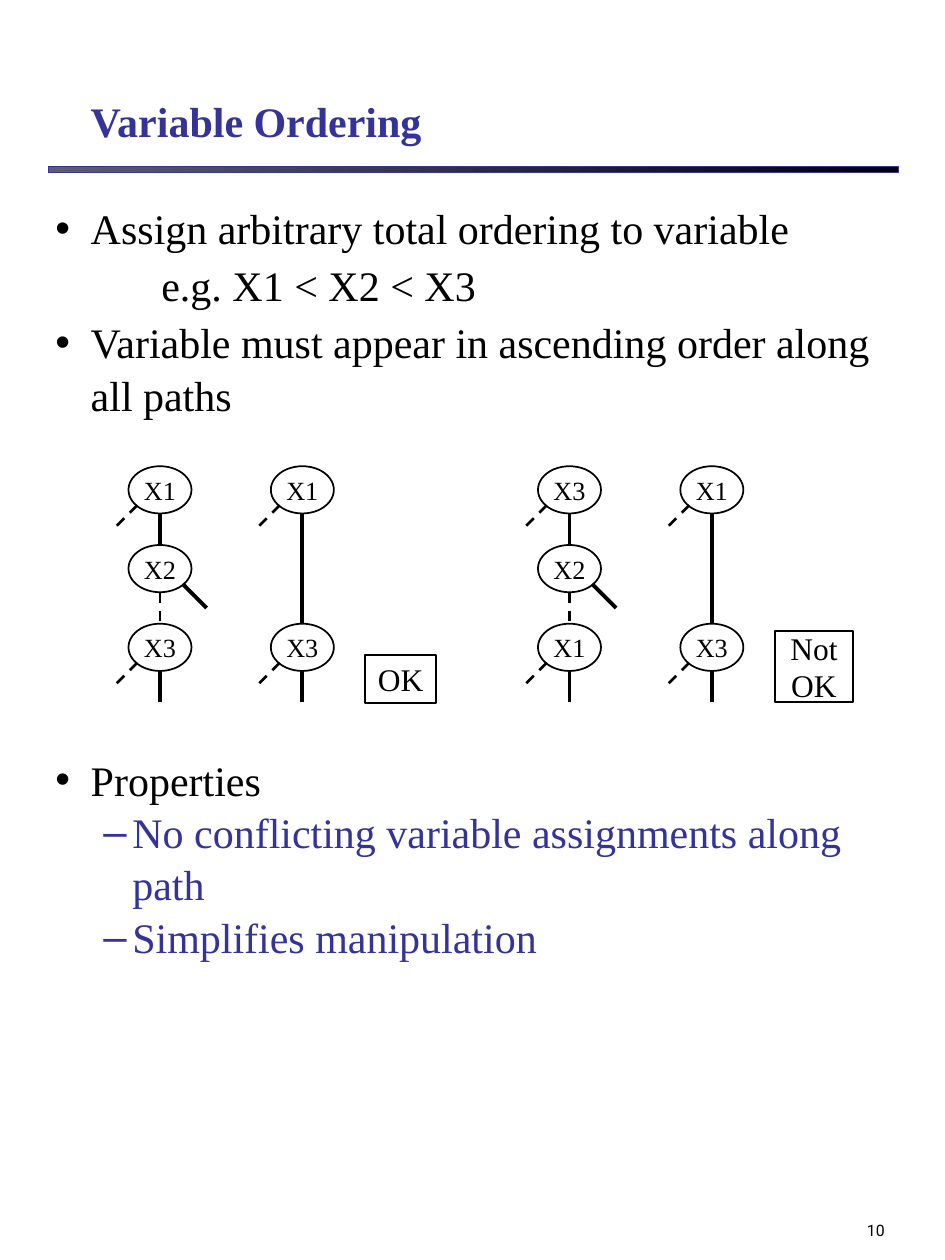
"""Build the Variable Ordering slide with its four decision chains."""
from lxml import etree
from pptx import Presentation, util as u
from pptx.dml.color import RGBColor
from pptx.enum import dml, shapes, text
from pptx.oxml.ns import qn

BLACK = RGBColor(0x00, 0x00, 0x00)
GRAY = RGBColor(0x5F, 0x5F, 0x5F)
NAVY = RGBColor(0x33, 0x33, 0x99)
SERIF = "Times New Roman"


def write(para, words, color=BLACK, **formats):
    span = para.add_run()
    span.text = words
    span.font.color.rgb = color
    for name, value in {"name": SERIF, "size": u.Pt(24), **formats}.items():
        setattr(span.font, name, value)


def draw_line(page, start, end, dashed=False):
    line = page.shapes.add_connector(
        shapes.MSO_CONNECTOR.STRAIGHT, *map(u.Inches, (*start, *end)))
    line.line.color.rgb = BLACK
    line.line.width = u.Pt(1.5 if dashed else 2.25)
    if dashed:
        line.line.dash_style = dml.MSO_LINE.DASH
    etree.SubElement(line._element.spPr, qn("a:effectLst"))


deck = Presentation()
deck.slide_width, deck.slide_height = u.Inches(7.5), u.Inches(10)
page = deck.slides.add_slide(deck.slide_layouts[1])

rule = page.shapes.add_shape(
    shapes.MSO_SHAPE.RECTANGLE, *map(u.Inches, (0.38, 1.32, 6.75, 0.05)))
rule.shadow.inherit = False
rule.fill.gradient()
rule.fill.gradient_angle = 0
for stop, color in zip(rule.fill.gradient_stops, (GRAY, BLACK)):
    stop.color.rgb = color
rule.line.color.rgb = NAVY
rule.line.width = u.Pt(0.25)

number = page.shapes.add_textbox(*map(u.Inches, (5.56, 9.22, 1.56, 0.67)))
title, body = page.shapes.title, page.placeholders[1]
places = [(title, (0.62, 0.59, 6.38, 0.62)), (body, (0.34, 1.54, 6.93, 6.46))]
for box, place in places:
    for name, value in zip(("left", "top", "width", "height"), place):
        setattr(box, name, u.Inches(value))
for box, anchor in ((number, "BOTTOM"), (title, "BOTTOM"), (body, "TOP")):
    frame = {"word_wrap": True, "auto_size": text.MSO_AUTO_SIZE.NONE,
             "vertical_anchor": text.MSO_ANCHOR[anchor]}
    for name, value in frame.items():
        setattr(box.text_frame, name, value)

para = number.text_frame.paragraphs[0]
para.alignment = text.PP_ALIGN.RIGHT
write(para, "10", name="Roboto", size=u.Pt(9))
para = title.text_frame.paragraphs[0]
para.alignment = text.PP_ALIGN.LEFT
write(para, "Variable Ordering", NAVY, bold=True)

items = [
    ("Assign arbitrary total ordering to variable", 0, "•", 0.28, -0.28, 2.8),
    ("e.g. X1 < X2 < X3", 0, None, 0.84, 0, 2.8),
    ("Variable must appear in ascending order along all paths",
     0, "•", 0.28, -0.28, 2.8),
    ("Properties", 0, "•", 0.28, -0.28, 190),
    ("No conflicting variable assignments along path",
     1, "–", 0.61, -0.23, 0),
    ("Simplifies manipulation", 1, "–", 0.61, -0.23, 0),
]
for index, (words, level, bullet, margin, indent, gap) in enumerate(items):
    frame = body.text_frame
    para = frame.add_paragraph() if index else frame.paragraphs[0]
    formats = {"level": level, "space_before": u.Pt(gap), "line_spacing": 1.04}
    for name, value in formats.items():
        setattr(para, name, value)
    props = para._p.get_or_add_pPr()
    props.set("marL", str(u.Inches(margin)))
    props.set("indent", str(u.Inches(indent)))
    if bullet:
        etree.SubElement(props, qn("a:buChar"), char=bullet)
    else:
        etree.SubElement(props, qn("a:buNone"))
    write(para, words, NAVY if level else BLACK)

TOP, STEP, WIDTH, HEIGHT = 3.7, 0.625, 0.5, 0.375
chains = [
    (1.27, {0: "X1", 1: "X2", 2: "X3"}),
    (2.4, {0: "X1", 2: "X3"}),
    (4.52, {0: "X3", 1: "X2", 2: "X1"}),
    (5.65, {0: "X1", 2: "X3"}),
]
labels = [
    (shapes.MSO_SHAPE.RECTANGLE, (2.9, 5.2, 0.56, 0.38), ["OK"], 18),
    (shapes.MSO_SHAPE.RECTANGLE, (6.15, 5.01, 0.62, 0.56), ["Not", "OK"], 18),
]
for center, nodes in chains:
    for row, label in nodes.items():
        top = TOP + row * STEP
        place = (center - WIDTH / 2, top, WIDTH, HEIGHT)
        labels.append((shapes.MSO_SHAPE.OVAL, place, [label], 15))
        below = min((other for other in nodes if other > row), default=None)
        end = top + STEP if below is None else TOP + below * STEP
        draw_line(page, (center, top + HEIGHT), (center, end), row == 1)
        side = 1 if row == 1 else -1
        draw_line(page, (center + side * 0.18, top + 0.31),
                  (center + side * 0.37, top + 0.5), row != 1)

for kind, place, lines, size in labels:
    box = page.shapes.add_shape(kind, *map(u.Inches, place))
    box.shadow.inherit = False
    box.fill.background()
    box.line.color.rgb = BLACK
    box.line.width = u.Pt(1)
    frame = box.text_frame
    frame.word_wrap = False
    frame.vertical_anchor = text.MSO_ANCHOR.MIDDLE
    for index, words in enumerate(lines):
        para = frame.add_paragraph() if index else frame.paragraphs[0]
        para.alignment = text.PP_ALIGN.CENTER
        write(para, words, size=u.Pt(size))

deck.save("out.pptx")
